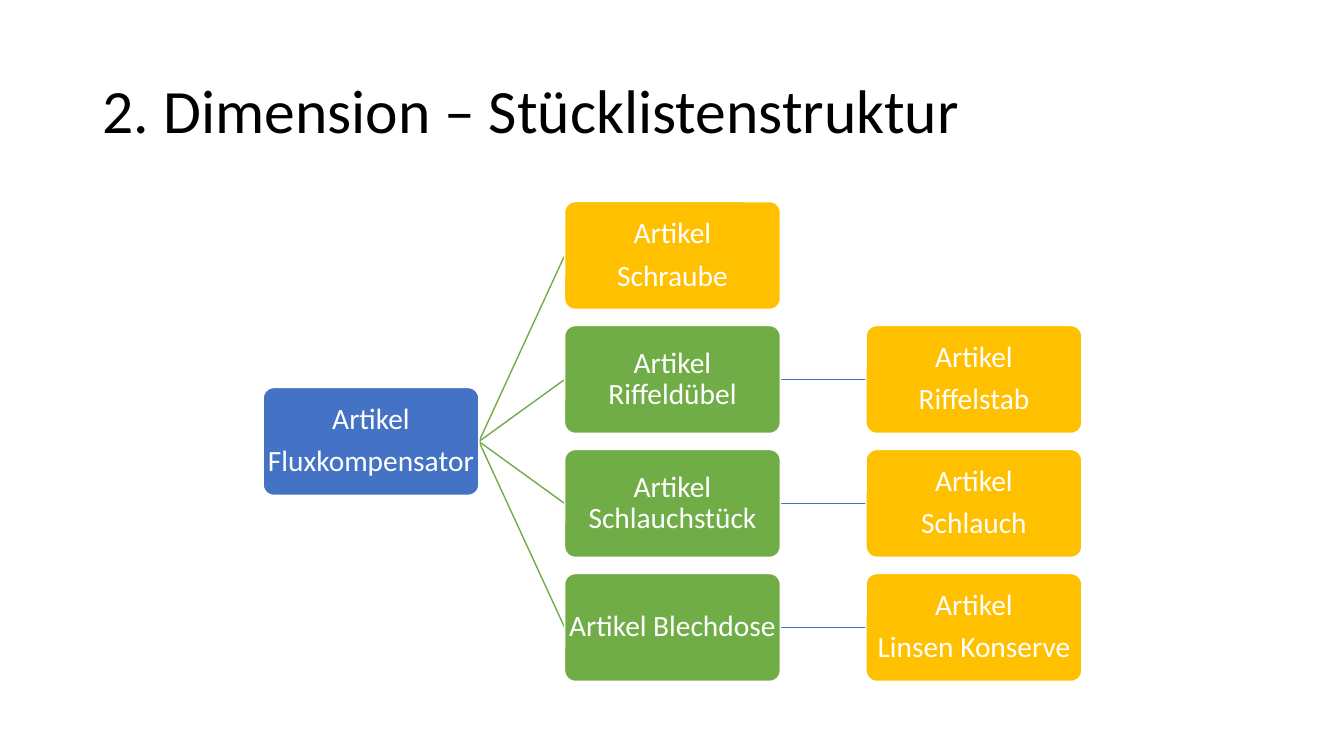
from dataclasses import dataclass

from pptx import Presentation
from pptx.dml.color import RGBColor
from pptx.enum.shapes import MSO_CONNECTOR, MSO_SHAPE
from pptx.enum.text import MSO_ANCHOR, PP_ALIGN
from pptx.oxml.ns import qn
from pptx.util import Inches, Pt

LEFT, CENTER = PP_ALIGN.LEFT, PP_ALIGN.CENTER
MIDDLE = MSO_ANCHOR.MIDDLE
ROUND = MSO_SHAPE.ROUNDED_RECTANGLE
STRAIGHT = MSO_CONNECTOR.STRAIGHT


@dataclass(frozen=True)
class Theme:
    font: str = "Calibri"
    title: float = 44
    body: float = 21
    black: str = "000000"
    white: str = "FFFFFF"
    blue: str = "4472C4"
    green: str = "70AD47"
    gold: str = "FFC000"


@dataclass(frozen=True)
class Node:
    lines: tuple[str, ...]
    col: float
    row: float
    fill: str

    @property
    def left(self) -> float:
        return 2.61 + 2.99 * self.col

    @property
    def top(self) -> float:
        return 2 + 1.23 * self.row

    @property
    def mid(self) -> float:
        return self.top + HIGH / 2


@dataclass(frozen=True)
class Link:
    start: Node
    end: Node
    color: str


THEME = Theme()
WIDE, HIGH = 2.14, 1.07

ROOT = Node(("Artikel", "Fluxkompensator"), 0, 1.5, THEME.blue)
PARTS = (
    Node(("Artikel", "Schraube"), 1, 0, THEME.gold),
    Node(("Artikel Riffeldübel",), 1, 1, THEME.green),
    Node(("Artikel Schlauchstück",), 1, 2, THEME.green),
    Node(("Artikel Blechdose",), 1, 3, THEME.green),
)
RAW = (
    Node(("Artikel", "Riffelstab"), 2, 1, THEME.gold),
    Node(("Artikel", "Schlauch"), 2, 2, THEME.gold),
    Node(("Artikel", "Linsen Konserve"), 2, 3, THEME.gold),
)
LINKS = (
    *(Link(ROOT, part, THEME.green) for part in PARTS),
    *(Link(part, raw, THEME.blue) for part, raw in zip(PARTS[1:], RAW)),
)


def write(frame, lines: tuple[str, ...], *, size: float, color: str,
          align=LEFT, after: float = 0, inset: tuple[float, float] = (0.1, 0.05)) -> None:
    """Fill a text frame with one paragraph per line."""
    frame.word_wrap = True
    frame.vertical_anchor = MIDDLE
    frame.margin_left = frame.margin_right = Inches(inset[0])
    frame.margin_top = frame.margin_bottom = Inches(inset[1])
    for i, line in enumerate(lines):
        para = frame.paragraphs[0] if i == 0 else frame.add_paragraph()
        para.alignment = align
        para.line_spacing = 0.9
        para.space_after = Pt(after)
        run = para.add_run()
        run.text = line
        run.font.name = THEME.font
        run.font.size = Pt(size)
        run.font.color.rgb = RGBColor.from_string(color)


def draw_node(slide, node: Node) -> None:
    """Draw one rounded box with its label."""
    box = slide.shapes.add_shape(ROUND, Inches(node.left), Inches(node.top),
                                 Inches(WIDE), Inches(HIGH))
    box.adjustments[0] = 0.1
    box.shadow.inherit = False
    box.fill.solid()
    box.fill.fore_color.rgb = RGBColor.from_string(node.fill)
    box.line.color.rgb = RGBColor.from_string(THEME.white)
    box.line.width = Pt(1)
    write(box.text_frame, node.lines, size=THEME.body, color=THEME.white,
          align=CENTER, after=7.35, inset=(0, 0.01))


def draw_link(slide, link: Link) -> None:
    """Join the right edge of one node to the left edge of the next."""
    line = slide.shapes.add_connector(
        STRAIGHT, Inches(link.start.left + WIDE), Inches(link.start.mid),
        Inches(link.end.left), Inches(link.end.mid))
    line.line.color.rgb = RGBColor.from_string(link.color)
    line.line.width = Pt(1)
    props = line._element.spPr
    props.append(props.makeelement(qn("a:effectLst"), {}))


def main() -> None:
    """Build the slide and save it."""
    deck = Presentation()
    deck.slide_width, deck.slide_height = Inches(13.33), Inches(7.5)
    slide = deck.slides.add_slide(deck.slide_layouts[6])
    title = slide.shapes.add_textbox(Inches(0.92), Inches(0.4), Inches(11.5), Inches(1.45))
    write(title.text_frame, ("2. Dimension – Stücklistenstruktur",),
          size=THEME.title, color=THEME.black)
    for link in LINKS:
        draw_link(slide, link)
    for node in (ROOT, *PARTS, *RAW):
        draw_node(slide, node)
    deck.save("out.pptx")


if __name__ == "__main__":
    main()
